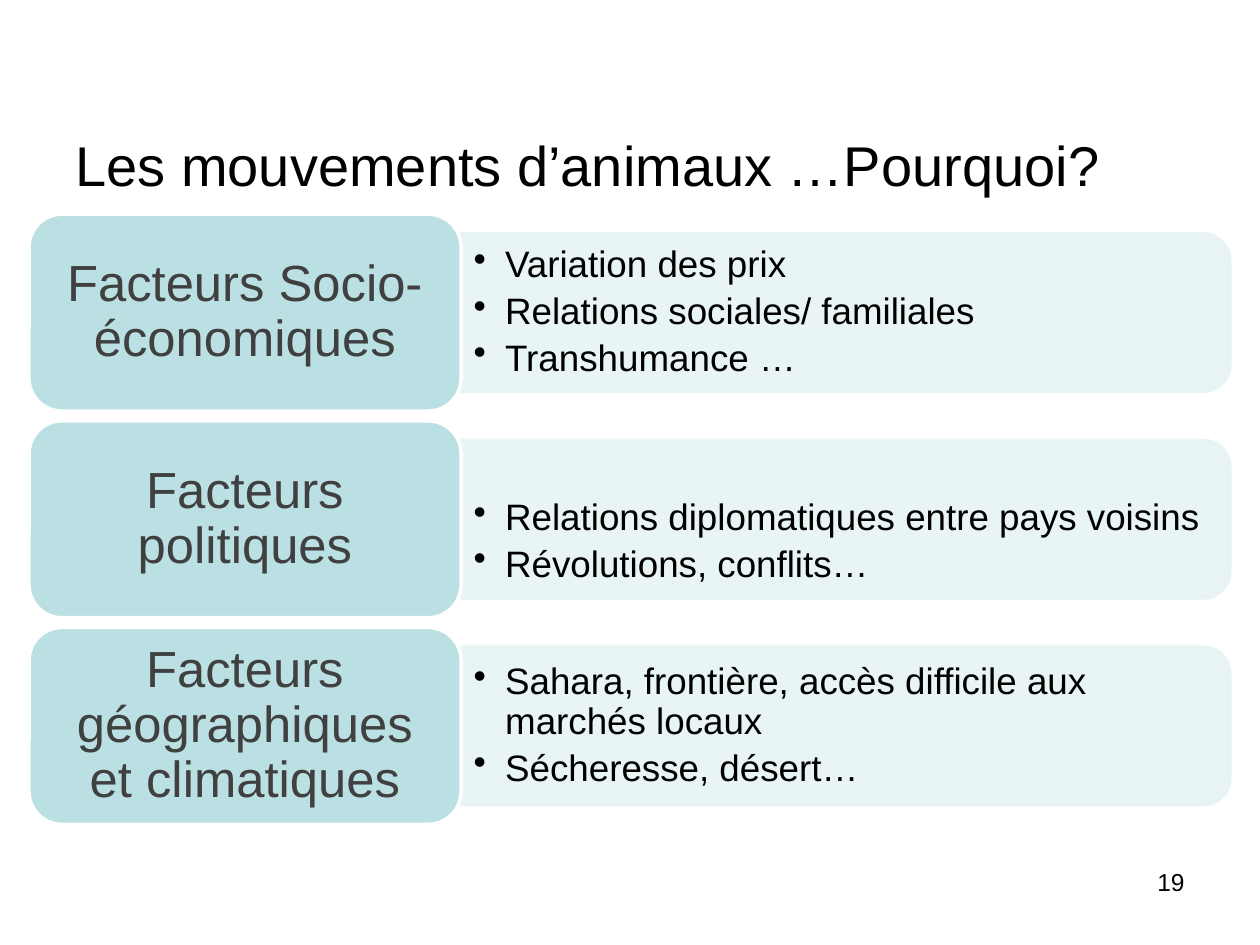
import pptx
import pptx.dml.color
import pptx.enum.shapes
import pptx.enum.text
import pptx.oxml.ns
import pptx.util
from lxml import etree

Pt = pptx.util.Pt
RGBColor = pptx.dml.color.RGBColor
SHAPE = pptx.enum.shapes.MSO_SHAPE
ALIGN = pptx.enum.text.PP_ALIGN
ANCHOR = pptx.enum.text.MSO_ANCHOR
qn = pptx.oxml.ns.qn

TITLE = "Les mouvements d’animaux …Pourquoi?"
PAGE_NUMBER = "19"
# Factor, its examples, and the extra margin above the examples
FACTORS = [
    ("Facteurs Socio-économiques",
     ["Variation des prix", "Relations sociales/ familiales", "Transhumance …"], 0),
    ("Facteurs politiques",
     ["Relations diplomatiques entre pays voisins", "Révolutions, conflits…"], 26),
    ("Facteurs géographiques et climatiques",
     ["Sahara, frontière, accès difficile aux marchés locaux",
      "Sécheresse, désert…"], 0),
]

BLACK = RGBColor(0x00, 0x00, 0x00)
WHITE = RGBColor(0xFF, 0xFF, 0xFF)
GREY = RGBColor(0x40, 0x40, 0x40)
TEAL = RGBColor(0xBB, 0xE0, 0xE3)
PALE_TEAL = RGBColor(0xE7, 0xF3, 0xF4)

ROWS_TOP, ROW_PITCH = 122.4, 118.08
LABEL_LEFT, LABEL_WIDTH, LABEL_HEIGHT = 16.6, 246.9, 112.5
PANEL_WIDTH, PANEL_HEIGHT = 439.2, 90
PANEL_LEFT = LABEL_LEFT + LABEL_WIDTH
EXAMPLES_WIDTH, EXAMPLES_HEIGHT = 434.9, 81.4
INDENT = 18


def write(frame, lines, size, color, margins=(7.2, 3.6, 7.2, 3.6),
          anchor=ANCHOR.TOP, bullets=False, **paragraph_format):
    """Fill a text frame; margins run left, top, right, bottom."""
    left, top, right, bottom = margins
    frame_format = {
        "word_wrap": True, "vertical_anchor": anchor,
        "margin_left": Pt(left), "margin_top": Pt(top),
        "margin_right": Pt(right), "margin_bottom": Pt(bottom),
    }
    for name, value in frame_format.items():
        setattr(frame, name, value)
    for number, line in enumerate(lines):
        paragraph = frame.add_paragraph() if number else frame.paragraphs[0]
        paragraph.text = line
        for name, value in paragraph_format.items():
            setattr(paragraph, name, value)
        if bullets:
            properties = paragraph._p.get_or_add_pPr()
            properties.set("marL", str(Pt(INDENT)))
            properties.set("indent", str(-Pt(INDENT)))
            etree.SubElement(properties, qn("a:buChar")).set("char", "•")
        for name, value in {"name": "Arial", "size": Pt(size)}.items():
            setattr(paragraph.font, name, value)
        paragraph.font.color.rgb = color


def add_box(left, top, width, height):
    return slide.shapes.add_textbox(Pt(left), Pt(top), Pt(width), Pt(height)).text_frame


def add_card(preset, left, top, width, height, fill, outline):
    card = slide.shapes.add_shape(preset, Pt(left), Pt(top), Pt(width), Pt(height))
    card.shadow.inherit = False
    card.fill.solid()
    card.fill.fore_color.rgb = fill
    card.line.color.rgb = outline
    card.line.width = Pt(2)
    return card


def add_panel(middle):
    """Draw a pale panel, turned so that its round corners face right."""
    center = PANEL_LEFT + PANEL_WIDTH / 2
    panel = add_card(SHAPE.ROUND_2_SAME_RECTANGLE,
                     center - PANEL_HEIGHT / 2, middle - PANEL_WIDTH / 2,
                     PANEL_HEIGHT, PANEL_WIDTH, PALE_TEAL, PALE_TEAL)
    panel.rotation = 90
    for color in panel._element.spPr.iter(qn("a:srgbClr")):
        etree.SubElement(color, qn("a:alpha")).set("val", "90000")


deck = pptx.Presentation()
deck.slide_width, deck.slide_height = Pt(720), Pt(540)
slide = deck.slides.add_slide(deck.slide_layouts[6])

write(add_box(36, 71.3, 648, 398.2), [TITLE], 32, BLACK)

for row, (factor, examples, extra_margin) in enumerate(FACTORS):
    top = ROWS_TOP + row * ROW_PITCH
    middle = top + LABEL_HEIGHT / 2
    add_panel(middle)
    examples_box = add_box(PANEL_LEFT + 0.7, middle - EXAMPLES_HEIGHT / 2,
                           EXAMPLES_WIDTH, EXAMPLES_HEIGHT)
    write(examples_box, examples, 21, BLACK, (6.5, 3 + extra_margin, 6.5, 3),
          ANCHOR.MIDDLE, bullets=True, line_spacing=0.9, space_after=Pt(4))
    label = add_card(SHAPE.ROUNDED_RECTANGLE, LABEL_LEFT, top,
                     LABEL_WIDTH, LABEL_HEIGHT, TEAL, WHITE)
    write(label.text_frame, [factor], 29, GREY, (8.6, 4.3, 8.6, 4.3),
          ANCHOR.MIDDLE, alignment=ALIGN.CENTER, line_spacing=0.9)

write(add_box(516, 491.8, 168, 37.4), [PAGE_NUMBER], 14, BLACK, alignment=ALIGN.RIGHT)

deck.save("out.pptx")
